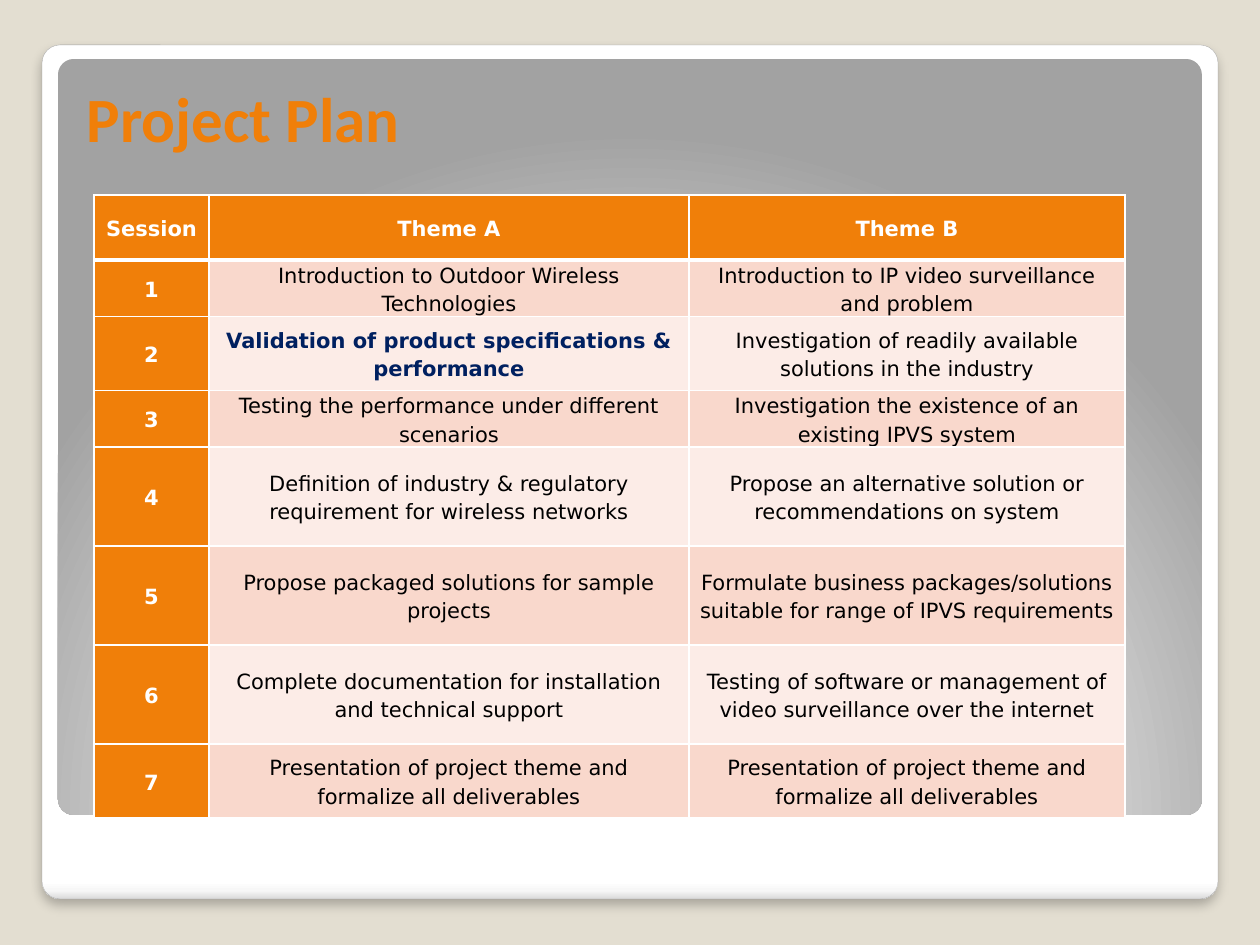
from dataclasses import dataclass
from typing import NamedTuple

import lxml.etree
import pptx
import pptx.dml.color
import pptx.enum.shapes
import pptx.enum.text
import pptx.util

NS = "http://schemas.openxmlformats.org/drawingml/2006/main"
SCALE = 914400 / 126  # EMU in one px
ALIGN = pptx.enum.text.PP_ALIGN
ANCHOR = pptx.enum.text.MSO_ANCHOR


@dataclass(frozen=True)
class Theme:
    back: str = "E3DED1"
    main: str = "F07F09"
    dark: str = "F9D8CC"
    pale: str = "FCECE7"
    white: str = "FFFFFF"
    ink: str = "000000"
    navy: str = "002060"
    edge: str = "A4A4A4"
    head: str = "Calibri"
    body: str = "DejaVu Sans"
    big: int = 36
    small: int = 12


class Box(NamedTuple):
    left: int
    top: int
    width: int
    height: int


class Panel(NamedTuple):
    box: Box
    stops: tuple
    shade: str  # XML for the course of the gradient
    edge: bool


class Look(NamedTuple):
    fill: str
    color: str
    bold: bool


THEME = Theme()

PANELS = (
    Panel(Box(42, 45, 1176, 854),
          ((0, "FFFFFF"), (98, "FFFFFF"), (99, "F7F7F7"), (100, "DADADA")),
          '<a:lin ang="5400000" scaled="0"/>', True),
    Panel(Box(58, 59, 1144, 756),
          ((0, "FFFFFF"), (55, "E1E1E1"), (100, "A2A2A2")),
          '<a:path path="circle"><a:fillToRect l="50000" t="175000" '
          'r="50000" b="-75000"/></a:path>', False),
)
TITLE = Box(74, 16, 1128, 145)
GRID = Box(94, 195, 1031, 622)
COLS = (115, 480, 436)
ROWS = (65, 56, 74, 56, 99, 99, 99, 74)
HEADS = ("Session", "Theme A", "Theme B")
PLAN = (
    ("Introduction to Outdoor Wireless Technologies",
     "Introduction to IP video surveillance and problem"),
    ("Validation of product specifications & performance",
     "Investigation of readily available solutions in the industry"),
    ("Testing the performance under different scenarios",
     "Investigation the existence of an existing IPVS system"),
    ("Definition of industry & regulatory requirement for wireless networks",
     "Propose an alternative solution or recommendations on system"),
    ("Propose packaged solutions for sample projects",
     "Formulate business packages/solutions suitable for range of IPVS requirements"),
    ("Complete documentation for installation and technical support",
     "Testing of software or management of video surveillance over the internet"),
    ("Presentation of project theme and formalize all deliverables",
     "Presentation of project theme and formalize all deliverables"),
)
FOCUS = (2, 1)  # the cell set off in navy


def px(size: int) -> int:
    return pptx.util.Emu(round(size * SCALE))


def rgb(code: str) -> pptx.dml.color.RGBColor:
    return pptx.dml.color.RGBColor.from_string(code)


def put(item, form: dict) -> None:
    for name, value in form.items():
        setattr(item, name, value)


def node(tag: str, inner: str, attrs: str = ""):
    return lxml.etree.fromstring(
        f'<a:{tag} xmlns:a="{NS}" {attrs}>{inner}</a:{tag}>')


def style(font, name: str, size: int, color: str, bold: bool) -> None:
    put(font, {"name": name, "size": pptx.util.Pt(size), "bold": bold})
    font.color.rgb = rgb(color)


def draw_panel(slide, panel: Panel) -> None:
    kind = pptx.enum.shapes.MSO_SHAPE.ROUNDED_RECTANGLE
    shape = slide.shapes.add_shape(kind, *map(px, panel.box))
    shape.adjustments[0] = 0.021
    shape.shadow.inherit = False
    props = shape.element.spPr
    if panel.edge:
        shape.line.color.rgb = rgb(THEME.edge)
        shape.line.width = pptx.util.Pt(0.16)
        props.find(f"{{{NS}}}effectLst").append(node(
            "outerShdw",
            f'<a:srgbClr val="{THEME.ink}"><a:alpha val="25000"/></a:srgbClr>',
            'blurRad="76200" dist="50800" dir="5400000" algn="t" '
            'rotWithShape="0"'))
    else:
        shape.line.fill.background()
    stops = "".join(
        f'<a:gs pos="{pos * 1000}"><a:srgbClr val="{code}"/></a:gs>'
        for pos, code in panel.stops)
    props.find(f"{{{NS}}}prstGeom").addnext(
        node("gradFill", f"<a:gsLst>{stops}</a:gsLst>{panel.shade}"))


def draw_title(slide, text: str) -> None:
    title = slide.shapes.title
    put(title, dict(zip(Box._fields, map(px, TITLE))))
    frame = title.text_frame
    put(frame, {"text": text, "vertical_anchor": ANCHOR.BOTTOM,
                "word_wrap": True,
                "auto_size": pptx.enum.text.MSO_AUTO_SIZE.NONE})
    para = frame.paragraphs[0]
    para.alignment = ALIGN.LEFT
    style(para.runs[0].font, THEME.head, THEME.big, THEME.main, True)
    slide.shapes.element.append(title.element)  # in front of the panels


def look(row: int, col: int) -> Look:
    if row == 0 or col == 0:
        return Look(THEME.main, THEME.white, True)
    fill = THEME.dark if row % 2 else THEME.pale
    if (row, col) == FOCUS:
        return Look(fill, THEME.navy, True)
    return Look(fill, THEME.ink, False)


def draw_cell(cell, text: str, row: int, col: int) -> None:
    form = look(row, col)
    put(cell, {"text": text, "vertical_anchor": ANCHOR.MIDDLE,
               "margin_left": px(9), "margin_right": px(9),
               "margin_top": 0, "margin_bottom": 0})
    cell.fill.solid()
    cell.fill.fore_color.rgb = rgb(form.fill)
    para = cell.text_frame.paragraphs[0]
    put(para, {"alignment": ALIGN.CENTER, "line_spacing": 1.15,
               "space_after": pptx.util.Pt(10)})
    style(para.runs[0].font, THEME.body, THEME.small, form.color, form.bold)

    # Borders come before the fill; the rule below the header is thick
    thick = {(0, "B"), (1, "T")}
    props = cell._tc.get_or_add_tcPr()
    for spot, side in enumerate("LRTB"):
        width = 38100 if (row, side) in thick else 12700
        props.insert(spot, node(
            f"ln{side}",
            f'<a:solidFill><a:srgbClr val="{THEME.white}"/></a:solidFill>',
            f'w="{width}"'))


def draw_plan(slide) -> None:
    lines = [HEADS] + [(str(num), *pair) for num, pair in enumerate(PLAN, 1)]
    table = slide.shapes.add_table(
        len(ROWS), len(COLS), *map(px, GRID)).table
    for item, width in zip(table.columns, COLS):
        item.width = px(width)
    for item, height in zip(table.rows, ROWS):
        item.height = px(height)
    for row, line in enumerate(lines):
        for col, text in enumerate(line):
            draw_cell(table.cell(row, col), text, row, col)


def main() -> None:
    deck = pptx.Presentation()
    put(deck, {"slide_width": pptx.util.Inches(10),
               "slide_height": pptx.util.Inches(7.5)})
    slide = deck.slides.add_slide(deck.slide_layouts[5])

    # Backdrop
    slide.background.fill.solid()
    slide.background.fill.fore_color.rgb = rgb(THEME.back)
    for panel in PANELS:
        draw_panel(slide, panel)

    # Title and session table
    draw_title(slide, "Project Plan")
    draw_plan(slide)
    deck.save("out.pptx")


if __name__ == "__main__":
    main()
